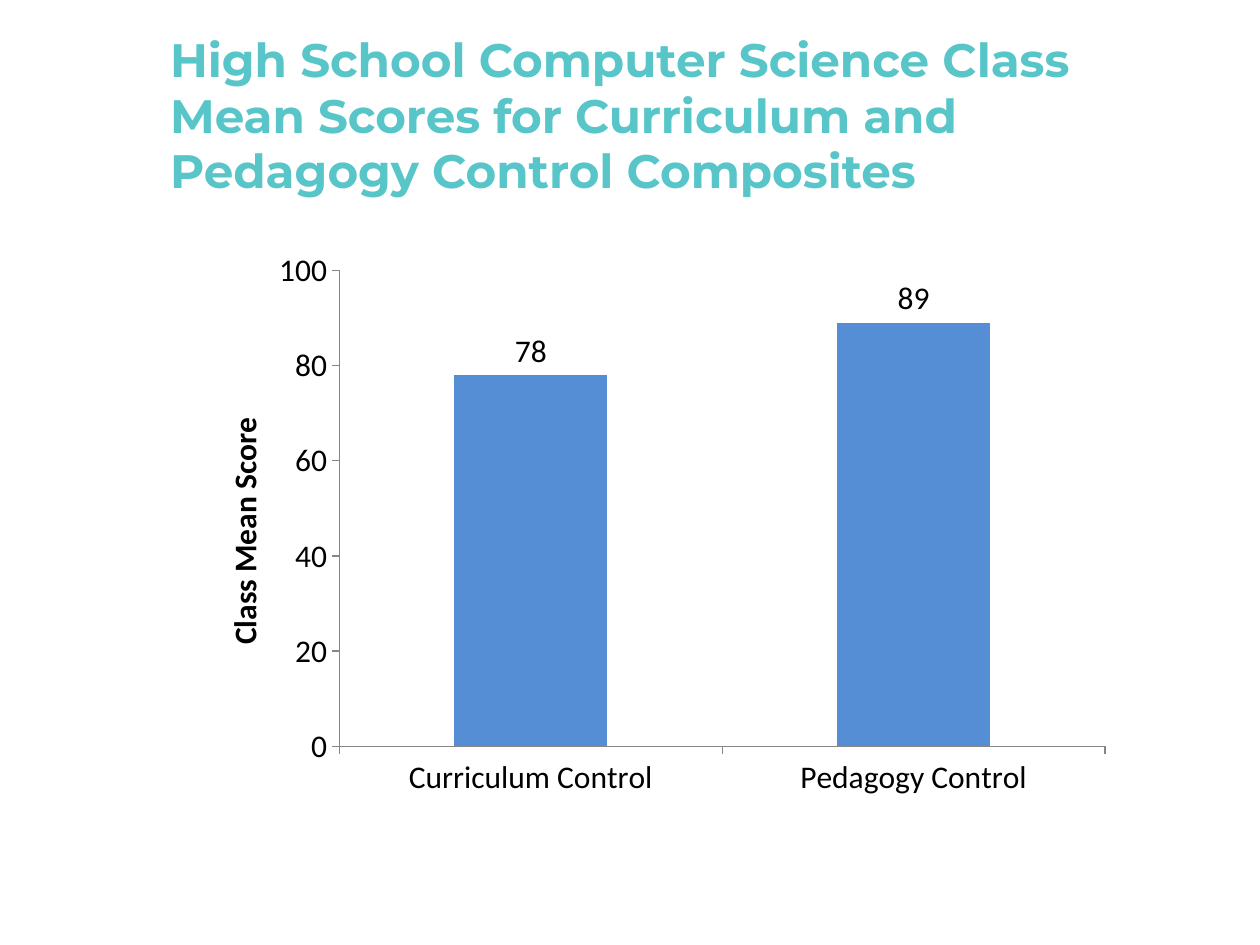
from lxml.etree import SubElement
from pptx import Presentation
from pptx.chart.data import CategoryChartData as ChartData
from pptx.dml.color import RGBColor
from pptx.enum.chart import XL_CHART_TYPE as ChartType
from pptx.enum.chart import XL_LABEL_POSITION as LabelPos
from pptx.enum.chart import XL_TICK_MARK as Tick
from pptx.enum.text import MSO_ANCHOR as Anchor
from pptx.enum.text import MSO_AUTO_SIZE as AutoSize
from pptx.enum.text import PP_ALIGN as Align
from pptx.oxml.ns import qn
from pptx.util import Pt

CHART_FONT = {"name": "Calibri", "size": Pt(18), "bold": False}
AXIS_TITLE_FONT = {**CHART_FONT, "bold": True}
TITLE_FONT = {"name": "Montserrat", "size": Pt(26.8), "bold": True}


def rgb(value):
    return RGBColor.from_string(value)


def set_attrs(obj, values):
    for name, value in values.items():
        setattr(obj, name, value)


def style_font(font, values, color):
    set_attrs(font, values)
    font.color.rgb = rgb(color)


def place(parent, index, inner=False, **fractions):
    layout = parent.find(qn("c:layout"))
    if layout is None:
        layout = parent.makeelement(qn("c:layout"))
        parent.insert(index, layout)
    manual = SubElement(layout, qn("c:manualLayout"))
    settings = {"layoutTarget": "inner"} if inner else {}
    settings.update(xMode="edge", yMode="edge", **fractions)
    for name, value in settings.items():
        SubElement(manual, qn(f"c:{name}")).set("val", str(value))


def add_title(s, text, left, top, width, height):
    sp = s.shapes.title
    set_attrs(sp, {"left": Pt(left), "top": Pt(top),
                   "width": Pt(width), "height": Pt(height)})
    tf = sp.text_frame
    set_attrs(tf, {"word_wrap": True, "auto_size": AutoSize.NONE,
                   "vertical_anchor": Anchor.MIDDLE})
    p = tf.paragraphs[0]
    set_attrs(p, {"alignment": Align.LEFT, "line_spacing": 0.98})
    r = p.add_run()
    r.text = text
    style_font(r.font, TITLE_FONT, "58C5C9")


def style_axis(axis):
    set_attrs(axis, {"has_major_gridlines": False,
                     "major_tick_mark": Tick.OUTSIDE,
                     "minor_tick_mark": Tick.NONE})
    axis.format.line.color.rgb = rgb("868686")
    axis.format.line.width = Pt(0.75)


def add_axis_title(axis, text):
    title = axis.axis_title
    r = title.text_frame.paragraphs[0].add_run()
    r.text = text
    style_font(r.font, AXIS_TITLE_FONT, "000000")
    place(title.element, 1, x=0.04, y=0.3)


def add_column_chart(s, scores, left, top, width, height):
    data = ChartData(number_format="0")
    data.categories = scores.keys()
    data.add_series("Series 1", scores.values())
    chart = s.shapes.add_chart(ChartType.COLUMN_CLUSTERED, Pt(left), Pt(top),
                               Pt(width), Pt(height), data).chart
    set_attrs(chart, {"has_title": False, "has_legend": False})
    style_font(chart.font, CHART_FONT, "000000")
    place(chart.element.find(".//" + qn("c:plotArea")), 0, inner=True,
          x=0.17, y=0.05, w=0.81, h=0.84)

    for axis in (chart.category_axis, chart.value_axis):
        style_axis(axis)
    set_attrs(chart.value_axis, {"minimum_scale": 0, "maximum_scale": 100,
                                 "major_unit": 20})
    add_axis_title(chart.value_axis, "Class Mean Score")

    plot = chart.plots[0]
    set_attrs(plot, {"gap_width": 150, "vary_by_categories": False,
                     "has_data_labels": True})
    set_attrs(plot.data_labels, {"show_value": True,
                                 "position": LabelPos.OUTSIDE_END})
    fill = plot.series[0].format.fill
    fill.solid()
    fill.fore_color.rgb = rgb("558ED5")


def main():
    prs = Presentation()
    set_attrs(prs, {"slide_width": Pt(720), "slide_height": Pt(540)})
    s = prs.slides.add_slide(prs.slide_layouts[5])
    add_column_chart(s, {"Curriculum Control": 78, "Pedagogy Control": 89},
                     102.24, 138.24, 540, 324)
    add_title(s, "High School Computer Science Class Mean Scores for "
              "Curriculum and Pedagogy Control Composites", 90, 21.6, 594, 90)
    prs.save("out.pptx")


if __name__ == "__main__":
    main()
